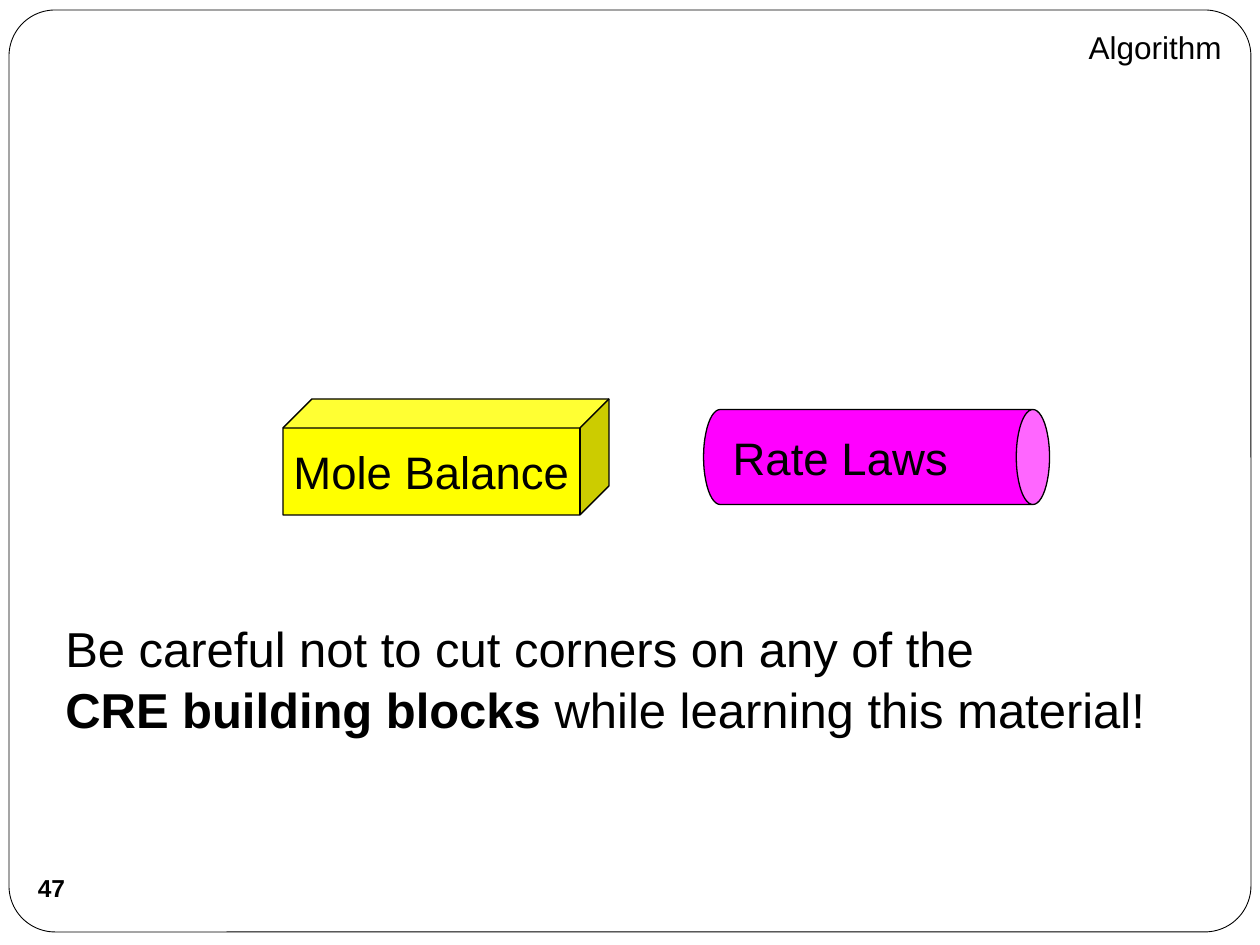
from dataclasses import dataclass

from pptx import Presentation
from pptx.dml.color import RGBColor
from pptx.enum.shapes import MSO_SHAPE as Preset
from pptx.enum.text import MSO_ANCHOR as Anchor, PP_ALIGN as Align
from pptx.util import Emu, Pt

EMU_PER_PX = 914400 / 126
FONT = "Arial"
COLORS = {
    "paper": "FFFFFF",
    "ink": "000000",
    "balance": "FFFF00",
    "rate": "FF00FF",
}


@dataclass(frozen=True)
class Area:
    left: int
    top: int
    width: int
    height: int

    def emu(self) -> list[Emu]:
        return [px(n) for n in (self.left, self.top, self.width, self.height)]


@dataclass(frozen=True)
class Block:
    preset: Preset
    area: Area
    adjustment: float | None = None
    fill: str | None = None
    line_width: float = 0
    rotation: int = 0
    label: str = ""
    size: int = 26
    bold: bool = False


FRAME = Block(Preset.ROUNDED_RECTANGLE, Area(9, 10, 1242, 922), 0.05, "paper", 0.5)
BALANCE = Block(Preset.CUBE, Area(283, 399, 326, 116), 0.25, "balance", 0.75,
                label="Mole Balance")
RATE = Block(Preset.CAN, Area(829, 284, 95, 346), 0.35, "rate", 0.75,
             rotation=90, label="Rate Laws")
NUMBER = Block(Preset.OVAL, Area(20, 856, 63, 63), label="47", size=14, bold=True)


def px(length: int) -> Emu:
    return Emu(round(length * EMU_PER_PX))


def color(name: str) -> RGBColor:
    return RGBColor.from_string(COLORS[name])


def write(frame, paragraphs, *, size: int, align=Align.LEFT, spacing=1.0) -> None:
    """Fill a text frame; each paragraph is a list of (text, bold) pairs."""
    for index, spans in enumerate(paragraphs):
        para = frame.add_paragraph() if index else frame.paragraphs[0]
        para.alignment = align
        para.line_spacing = spacing
        for text, bold in spans:
            span = para.add_run()
            span.text = text
            span.font.name = FONT
            span.font.size = Pt(size)
            span.font.bold = bold
            span.font.color.rgb = color("ink")


def add_block(page, block: Block):
    shape = page.shapes.add_shape(block.preset, *block.area.emu())
    shape.shadow.inherit = False
    shape.rotation = block.rotation
    if block.adjustment is not None:
        shape.adjustments[0] = block.adjustment
    if block.fill:
        shape.fill.solid()
        shape.fill.fore_color.rgb = color(block.fill)
    else:
        shape.fill.background()
    if block.line_width:
        shape.line.color.rgb = color("ink")
        shape.line.width = Pt(block.line_width)
    else:
        shape.line.fill.background()
    if block.label:
        frame = shape.text_frame
        frame.word_wrap = False
        frame.vertical_anchor = Anchor.MIDDLE
        write(frame, [[(block.label, block.bold)]], size=block.size, align=Align.CENTER)
    return shape


def add_text(page, area: Area, paragraphs, **text_format) -> None:
    box = page.shapes.add_textbox(*area.emu())
    box.text_frame.word_wrap = True
    write(box.text_frame, paragraphs, **text_format)


def set_level_text(shape) -> None:
    """Turn the text so that it reads level inside a shape rotated by 90 degrees."""
    body = shape.text_frame._txBody.bodyPr
    body.set("vert", "eaVert")
    body.set("rot", str(180 * 60000))


def main() -> None:
    deck = Presentation()
    deck.slide_width, deck.slide_height = px(1260), px(945)
    page = deck.slides.add_slide(deck.slide_layouts[6])

    add_block(page, FRAME)
    add_block(page, BALANCE)
    number = add_block(page, NUMBER).text_frame
    number.margin_left = number.margin_right = 0
    number.margin_top = number.margin_bottom = 0
    add_text(page, Area(53, 609, 1207, 190), [
        [("Be careful not to cut corners on any of the", False)],
        [("CRE building blocks ", True), ("while learning this material!", False)],
    ], size=28, spacing=1.05)
    set_level_text(add_block(page, RATE))
    add_text(page, Area(887, 22, 347, 51), [[("Algorithm", False)]],
             size=18, align=Align.RIGHT)

    deck.save("out.pptx")


if __name__ == "__main__":
    main()
